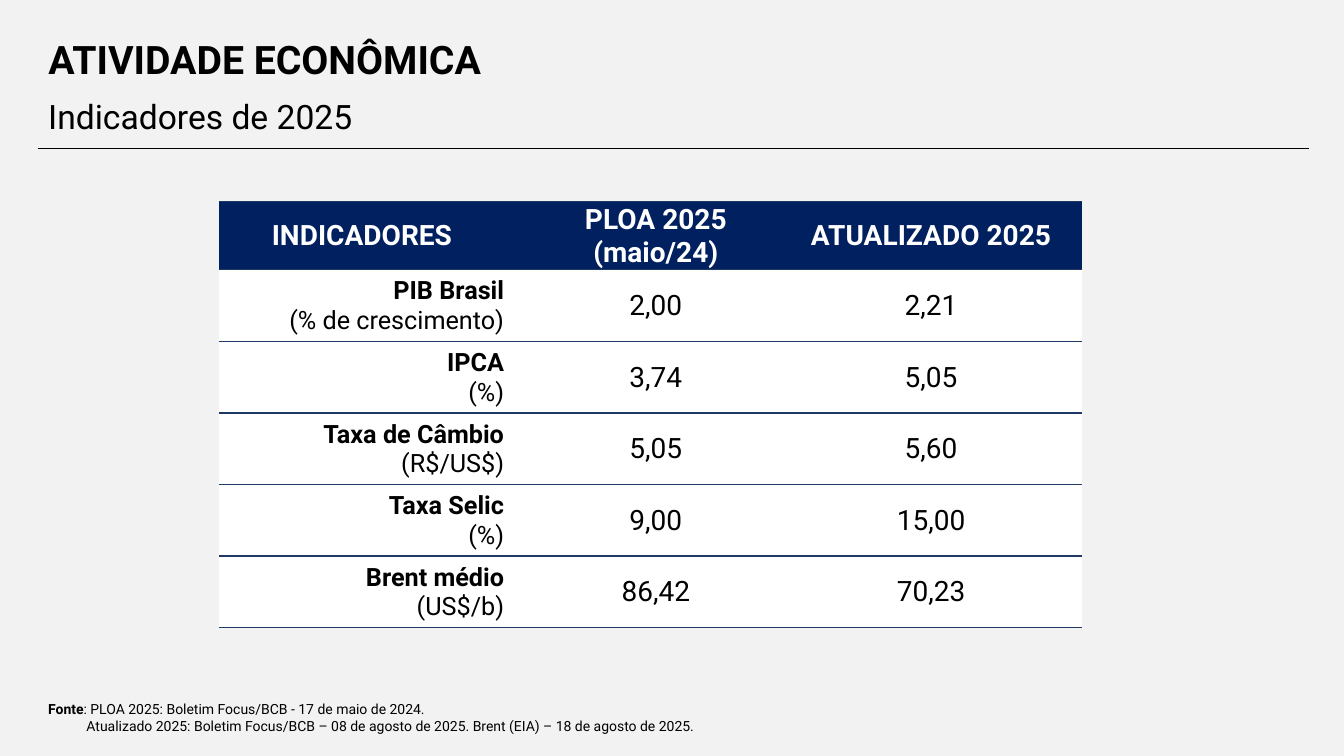
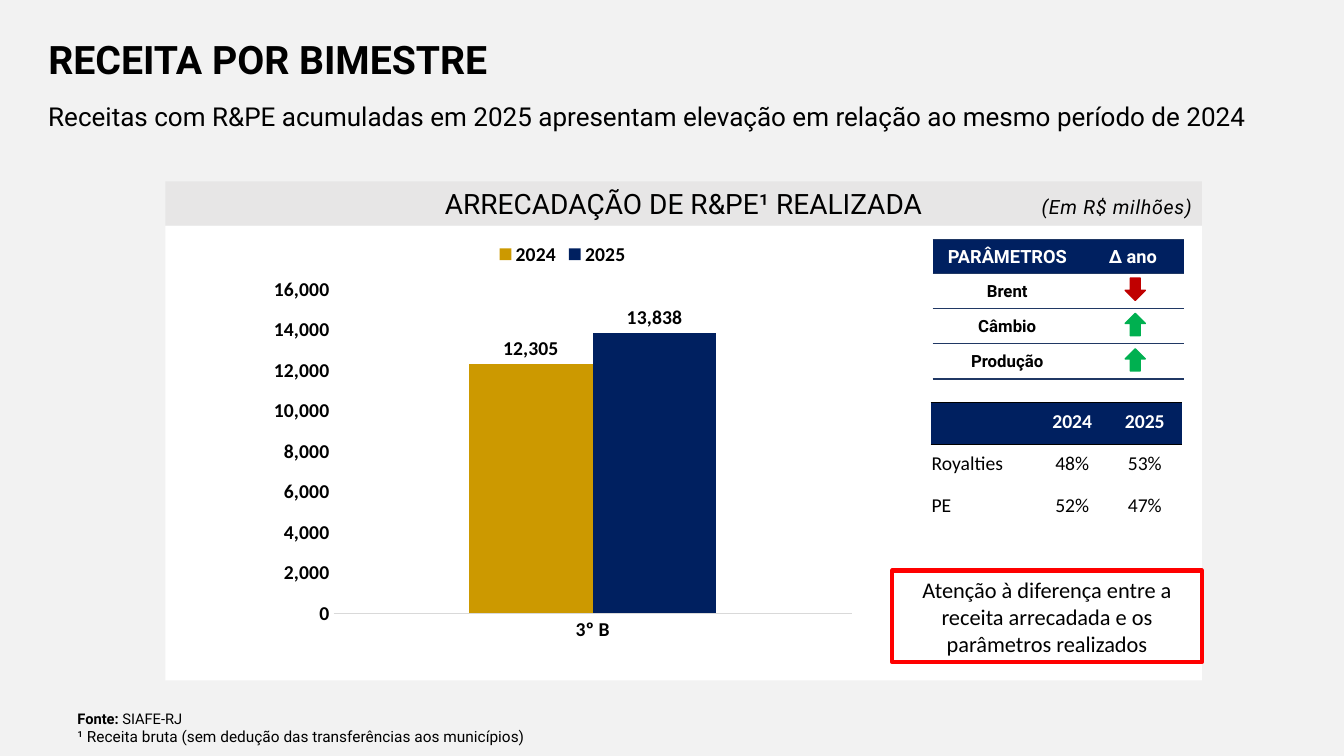
from lxml.etree import SubElement
from pptx import Presentation
from pptx.chart.data import CategoryChartData
from pptx.dml.color import RGBColor
from pptx.enum.chart import XL_CHART_TYPE, XL_LABEL_POSITION, XL_LEGEND_POSITION, XL_TICK_MARK
from pptx.enum.shapes import MSO_CONNECTOR, MSO_SHAPE
from pptx.enum.text import MSO_ANCHOR, MSO_AUTO_SIZE, PP_ALIGN
from pptx.oxml import parse_xml
from pptx.oxml.ns import nsdecls, qn
from pptx.util import Emu, Pt

# Shared look
EMU_PER_PX = 9144
BLACK, WHITE, NAVY, GOLD = "000000", "FFFFFF", "002060", "CC9900"
PAGE, BAND, RULE, AXIS = "F2F2F2", "E7E6E6", "203864", "D9D9D9"
RED, GREEN, ALERT = "C00000", "00B050", "FF0000"
TEXT_FONT, DATA_FONT = "Roboto", "Calibri"
MILLIONS = "#,##0,,"
NO_TABLE_STYLE = "{2D5ABB26-0587-4C30-8999-92F81FD0307C}"


def px(value):
    return Emu(value * EMU_PER_PX)


def place(box):
    return [px(value) for value in box]


def rgb(color):
    return RGBColor.from_string(color)


def style_font(font, size, color=BLACK, bold=False, name=TEXT_FONT):
    font.size, font.bold, font.name = Pt(size), bold, name
    font.color.rgb = rgb(color)


def format_text(text_frame, size, color=BLACK, bold=False, name=TEXT_FONT, align=PP_ALIGN.LEFT):
    for paragraph in text_frame.paragraphs:
        paragraph.alignment = align
        for run in paragraph.runs:
            style_font(run.font, size, color, bold, name)


def add_text(slide, box, text, size, anchor=MSO_ANCHOR.MIDDLE, **style):
    text_frame = slide.shapes.add_textbox(*place(box)).text_frame
    text_frame.word_wrap = True
    text_frame.vertical_anchor = anchor
    text_frame.text = text
    format_text(text_frame, size, **style)
    return text_frame


def add_box(slide, box, fill=None, line=None, line_width=1, kind=MSO_SHAPE.RECTANGLE):
    shape = slide.shapes.add_shape(kind, *place(box))
    shape.shadow.inherit = False
    if fill:
        shape.fill.solid()
        shape.fill.fore_color.rgb = rgb(fill)
    else:
        shape.fill.background()
    if line:
        shape.line.color.rgb = rgb(line)
        shape.line.width = Pt(line_width)
    else:
        shape.line.fill.background()
    return shape


def add_boxed_text(slide, box, text, size, name=TEXT_FONT, **look):
    text_frame = add_box(slide, box, **look).text_frame
    text_frame.word_wrap = True
    text_frame.vertical_anchor = MSO_ANCHOR.MIDDLE
    text_frame.text = text
    format_text(text_frame, size, name=name, align=PP_ALIGN.CENTER)


def add_rule(slide, left, right, y):
    rule = slide.shapes.add_connector(MSO_CONNECTOR.STRAIGHT, px(left), px(y), px(right), px(y))
    rule.line.color.rgb = rgb(BLACK)
    rule.line.width = Pt(0.5)
    SubElement(rule._element.spPr, qn("a:effectLst"))


def add_heading(slide, title_text, subtitle, subtitle_size):
    title = slide.shapes.title
    title.left, title.top, title.width, title.height = place((38, 22, 889, 79))
    text_frame = title.text_frame
    text_frame.text = title_text
    text_frame.auto_size = MSO_AUTO_SIZE.NONE
    text_frame.vertical_anchor = MSO_ANCHOR.MIDDLE
    text_frame.paragraphs[0].line_spacing = 0.9
    format_text(text_frame, 28, bold=True)
    add_text(slide, (38, 86, 1260, 59), subtitle, subtitle_size)


def add_source(slide, box, label, first_line, second_line, sizes, indent=0):
    text_frame = add_text(slide, box, f"{label}\n{second_line}", sizes[1], anchor=MSO_ANCHOR.TOP)
    first, second = text_frame.paragraphs
    first.add_run().text = first_line
    for run, bold in zip(first.runs, (True, False)):
        style_font(run.font, sizes[0], bold=bold)
    second._p.get_or_add_pPr().set("marL", str(px(indent)))


def set_border(cell, sides, color, width):
    # Bottom comes before top because each side is put in first place
    properties = cell._tc.get_or_add_tcPr()
    for side in sides:
        properties.insert(0, parse_xml(
            f'<a:ln{side} {nsdecls("a")} w="{Pt(width)}"><a:solidFill>'
            f'<a:srgbClr val="{color}"/></a:solidFill></a:ln{side}>'))


def add_table(slide, left, top, widths, heights, rows, bottom_margin=0):
    box = (left, top, sum(widths), sum(heights))
    table = slide.shapes.add_table(len(rows), len(widths), *place(box)).table
    table.first_row = table.horz_banding = False
    table._tbl.tblPr.find(qn("a:tableStyleId")).text = NO_TABLE_STYLE
    for column, width in zip(table.columns, widths):
        column.width = px(width)
    for row, height, texts in zip(table.rows, heights, rows):
        row.height = px(height)
        for cell, text in zip(row.cells, texts):
            cell.margin_left = cell.margin_right = cell.margin_top = px(1)
            cell.margin_bottom = px(bottom_margin)
            cell.vertical_anchor = MSO_ANCHOR.MIDDLE
            cell.text_frame.text = text
    return table


def format_row(row, size, fill=None, borders="", border_color=RULE, border_width=1, **style):
    for cell in row.cells:
        if fill:
            cell.fill.solid()
            cell.fill.fore_color.rgb = rgb(fill)
        else:
            cell.fill.background()
        set_border(cell, borders, border_color, border_width)
        format_text(cell.text_frame, size, **{"align": PP_ALIGN.CENTER, **style})


def add_indicator_table(slide, left, top):
    # Narrow empty columns separate names from values and close the right side
    rows = [
        ("INDICADORES", "", "PLOA 2025\n(maio/24)", "ATUALIZADO 2025", ""),
        ("PIB Brasil\n(% de crescimento)", "", "2,00", "2,21", ""),
        ("IPCA\n(%)", "", "3,74", "5,05", ""),
        ("Taxa de Câmbio\n(R$/US$)", "", "5,05", "5,60", ""),
        ("Taxa Selic\n(%)", "", "9,00", "15,00", ""),
        ("Brent médio\n(US$/b)", "", "86,42", "70,23", ""),
    ]
    table = add_table(slide, left, top, (284, 17, 265, 281, 9), [67] + [71] * 5, rows)
    header, *body = table.rows
    format_row(header, 20, fill=NAVY, borders="BT", color=WHITE, bold=True)
    for row in body:
        format_row(row, 20, fill=WHITE, borders="BT")
        name = row.cells[0].text_frame
        format_text(name, 18, align=PP_ALIGN.RIGHT)
        name.paragraphs[0].runs[0].font.bold = True


def add_parameter_table(slide, left, top):
    parameters = [("Brent", False), ("Câmbio", True), ("Produção", True)]
    widths, header_height, row_height = (148, 101), 33, 35
    rows = [("PARÂMETROS", "∆ ano")] + [(name, "") for name, rises in parameters]
    heights = [header_height] + [row_height] * len(parameters)
    table = add_table(slide, left, top, widths, heights, rows)
    header, *body = table.rows
    format_row(header, 13, fill=NAVY, borders="BT", color=WHITE, bold=True)
    for index, (row, (name, rises)) in enumerate(zip(body, parameters)):
        format_row(row, 12, borders="BT", bold=True)
        arrow_box = (left + widths[0] + 43, top + header_height + index * row_height + 5, 20, 22)
        color = GREEN if rises else RED
        kind = MSO_SHAPE.UP_ARROW if rises else MSO_SHAPE.DOWN_ARROW
        add_box(slide, arrow_box, fill=color, line=color, kind=kind)


def add_share_table(slide, left, top):
    rows = [("", "2024", "2025"), ("Royalties", "48%", "53%"), ("PE", "52%", "47%")]
    table = add_table(slide, left, top, (105, 71, 73), [42] * 3, rows, bottom_margin=5)
    header, *body = table.rows
    format_row(header, 14, fill=NAVY, borders="BT", border_color=BLACK, border_width=0.5,
               color=WHITE, bold=True, name=DATA_FONT)
    for row in body:
        format_row(row, 14, name=DATA_FONT)
        row.cells[0].text_frame.paragraphs[0].alignment = PP_ALIGN.LEFT


def add_revenue_chart(slide, box):
    data = CategoryChartData(number_format=MILLIONS)
    data.categories = ["3º B"]
    data.add_series("2024", [12_305_000_000])
    data.add_series("2025", [13_838_000_000])
    chart = slide.shapes.add_chart(XL_CHART_TYPE.COLUMN_CLUSTERED, *place(box), data).chart
    chart.has_title = False
    style_font(chart.font, 14, bold=True, name=DATA_FONT)
    chart.has_legend = True
    chart.legend.position = XL_LEGEND_POSITION.TOP
    chart.legend.include_in_layout = False

    # Columns and their labels
    plot = chart.plots[0]
    plot.gap_width, plot.overlap, plot.vary_by_categories = 219, 0, False
    for series, color in zip(plot.series, (GOLD, NAVY)):
        series.format.fill.solid()
        series.format.fill.fore_color.rgb = rgb(color)
        labels = series.data_labels
        labels.show_value = True
        labels.position = XL_LABEL_POSITION.OUTSIDE_END
        labels.number_format, labels.number_format_is_linked = MILLIONS, False
        style_font(labels.font, 14, bold=True, name=DATA_FONT)

    # Axes
    values, categories = chart.value_axis, chart.category_axis
    values.minimum_scale, values.maximum_scale = 0, 16_000_000_000
    values.major_unit = 2_000_000_000
    values.has_major_gridlines = False
    values.tick_labels.number_format = MILLIONS
    values.tick_labels.number_format_is_linked = False
    values.format.line.fill.background()
    categories.format.line.color.rgb = rgb(AXIS)
    categories.format.line.width = Pt(0.75)
    for axis in (values, categories):
        axis.major_tick_mark = XL_TICK_MARK.NONE
        style_font(axis.tick_labels.font, 14, bold=True, name=DATA_FONT)

    # Plot area as shares of the chart
    area = chart._chartSpace.chart.plotArea
    for old_layout in area.findall(qn("c:layout")):
        area.remove(old_layout)
    shares = "".join(f'<c:{key} val="{share}"/>' for key, share in
                     (("x", 0.12), ("y", 0.14), ("w", 0.86), ("h", 0.77)))
    area.insert(0, parse_xml(
        f'<c:layout {nsdecls("c")}><c:manualLayout><c:layoutTarget val="inner"/>'
        f'<c:xMode val="edge"/><c:yMode val="edge"/>{shares}</c:manualLayout></c:layout>'))


def add_revenue_panel(slide, left, top, width):
    band_height = 44
    add_boxed_text(slide, (left, top, width, band_height), "ARRECADAÇÃO DE R&PE¹ REALIZADA", 20,
                   fill=BAND)
    unit = add_text(slide, (left + width - 186, top + 4, 186, 40), "(Em R$ milhões)", 14,
                    anchor=MSO_ANCHOR.TOP, align=PP_ALIGN.RIGHT).paragraphs[0]
    unit.line_spacing = 1.2
    unit.runs[0].font.italic = True
    unit.runs[0]._r.get_or_add_rPr().set("spc", "50")
    add_box(slide, (left, top + band_height, width, 451), fill=WHITE)
    add_revenue_chart(slide, (left + 95, top + 49, 598, 417))
    add_parameter_table(slide, left + 761, top + 58)
    add_share_table(slide, left + 759, top + 219)
    add_boxed_text(
        slide, (left + width - 307, top + 386, 307, 91),
        "Atenção à diferença entre a receita arrecadada e os parâmetros realizados",
        16, name=DATA_FONT, line=ALERT, line_width=3)


def build_activity_slide(slide):
    add_heading(slide, "ATIVIDADE ECONÔMICA", "Indicadores de 2025", 24)
    add_rule(slide, 38, 1298, 147)
    add_indicator_table(slide, 217, 200)
    add_source(
        slide, (38, 690, 1077, 43), "Fonte", ": PLOA 2025: Boletim Focus/BCB - 17 de maio de 2024.",
        "Atualizado 2025: Boletim Focus/BCB – 08 de agosto de 2025. "
        "Brent (EIA) – 18 de agosto de 2025.", (10, 10), indent=38)


def build_revenue_slide(slide):
    add_heading(
        slide, "RECEITA POR BIMESTRE",
        "Receitas com R&PE acumuladas em 2025 apresentam elevação em relação ao mesmo período de 2024",
        18.6)
    add_revenue_panel(slide, 164, 180, 1028)
    add_source(slide, (67, 699, 1201, 46), "Fonte: ", "SIAFE-RJ",
               "¹ Receita bruta (sem dedução das transferências aos municípios)", (10.5, 11))


def main():
    presentation = Presentation()
    presentation.slide_width, presentation.slide_height = px(1333), px(750)
    background = presentation.slide_master.background.fill
    background.solid()
    background.fore_color.rgb = rgb(PAGE)
    title_only = presentation.slide_layouts.get_by_name("Title Only")
    for build in (build_activity_slide, build_revenue_slide):
        build(presentation.slides.add_slide(title_only))
    presentation.save("out.pptx")


if __name__ == "__main__":
    main()
